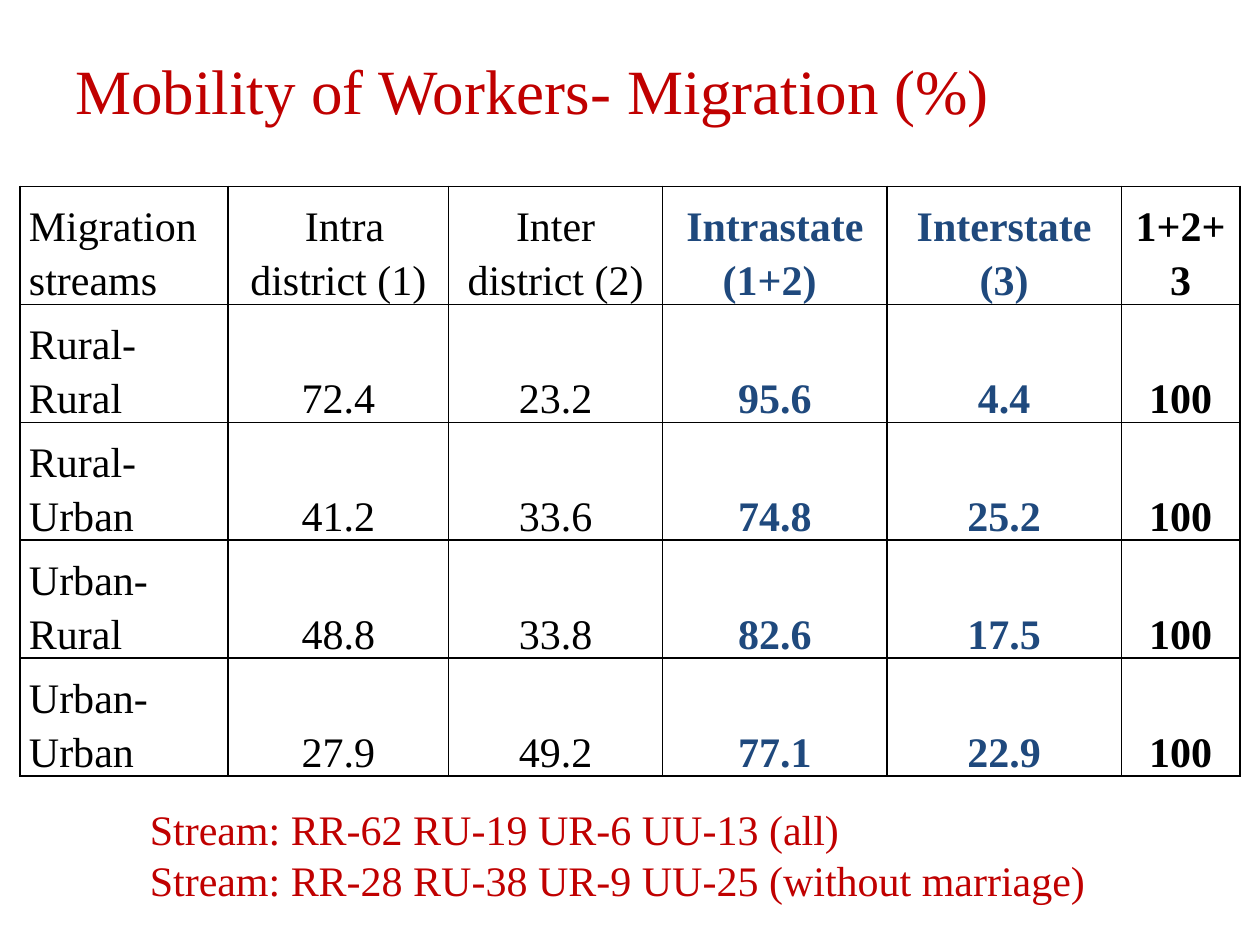
from lxml.etree import SubElement
from pptx import Presentation
from pptx.dml.color import RGBColor
from pptx.enum.text import MSO_ANCHOR as Anchor, PP_ALIGN as Align
from pptx.oxml.ns import qn
from pptx.util import Inches, Pt

COLORS = {"red": "C00000", "blue": "1F497D", "black": "000000", "white": "FFFFFF"}
FONT = "Times New Roman"

TITLE = ["Mobility of Workers- Migration (%)"]
STREAM_SHARES = [
    "Stream: RR-62 RU-19 UR-6 UU-13 (all)",
    "Stream: RR-28 RU-38 UR-9 UU-25 (without marriage)",
]
MIGRATION = [
    ["Migration\nstreams", "Intra district (1)", "Inter district (2)",
     "Intrastate (1+2) ", "Interstate (3)", "1+2+3"],
    ["Rural-Rural", "72.4", "23.2", "95.6", "4.4", "100"],
    ["Rural-Urban", "41.2", "33.6", "74.8", "25.2", "100"],
    ["Urban-Rural", "48.8", "33.8", "82.6", "17.5", "100"],
    ["Urban-Urban", "27.9", "49.2", "77.1", "22.9", "100"],
]
# width in inches, text format
COLUMNS = [
    (1.65, {}),
    (1.75, {"align": Align.CENTER}),
    (1.70, {"align": Align.CENTER}),
    (1.78, {"align": Align.CENTER, "color": "blue", "bold": True}),
    (1.86, {"align": Align.CENTER, "color": "blue", "bold": True}),
    (0.94, {"align": Align.CENTER, "bold": True}),
]
TABLE_LEFT, TABLE_TOP, TABLE_HEIGHT = 0.16, 1.48, 4.68


def write(frame, lines, size=24, color="black", bold=False,
          align=Align.LEFT, spacing=None):
    for index, line in enumerate(lines):
        para = frame.paragraphs[0] if index == 0 else frame.add_paragraph()
        para.alignment = align
        if spacing:
            para.line_spacing = spacing
        span = para.add_run()
        span.text = line
        span.font.name = FONT
        span.font.size = Pt(size)
        span.font.bold = bold
        span.font.color.rgb = RGBColor.from_string(COLORS[color])


def add_text(page, lines, left, top, width, height, anchor=Anchor.TOP, **style):
    box = page.shapes.add_textbox(*map(Inches, (left, top, width, height)))
    box.text_frame.word_wrap = True
    box.text_frame.vertical_anchor = anchor
    write(box.text_frame, lines, **style)


def add_borders(cell):
    properties = cell._tc.get_or_add_tcPr()
    for side in ("lnL", "lnR", "lnT", "lnB"):
        line = SubElement(properties, qn(f"a:{side}"), w=str(Pt(1)))
        fill = SubElement(line, qn("a:solidFill"))
        SubElement(fill, qn("a:srgbClr"), val=COLORS["black"])


def add_migration_table(page):
    width = sum(column_width for column_width, _ in COLUMNS)
    table = page.shapes.add_table(
        len(MIGRATION), len(COLUMNS), Inches(TABLE_LEFT), Inches(TABLE_TOP),
        Inches(width), Inches(TABLE_HEIGHT)).table
    for column, (column_width, _) in zip(table.columns, COLUMNS):
        column.width = Inches(column_width)
    for row, values in zip(table.rows, MIGRATION):
        for cell, value, (_, style) in zip(row.cells, values, COLUMNS):
            cell.margin_left = cell.margin_right = Inches(0.07)
            cell.margin_top = cell.margin_bottom = 0
            cell.vertical_anchor = Anchor.BOTTOM
            add_borders(cell)
            cell.fill.solid()
            cell.fill.fore_color.rgb = RGBColor.from_string(COLORS["white"])
            write(cell.text_frame, value.split("\n"), spacing=1.15, **style)
    intra_para = table.cell(0, 1).text_frame.paragraphs[0]
    intra_para._p.get_or_add_pPr().set("indent", str(Inches(0.1)))


def main():
    deck = Presentation()
    deck.slide_width, deck.slide_height = Inches(10), Inches(7.5)
    page = deck.slides.add_slide(deck.slide_layouts[6])
    add_text(page, TITLE, 0.5, 0.08, 9.15, 1.25,
             anchor=Anchor.MIDDLE, size=36, color="red")
    add_migration_table(page)
    add_text(page, STREAM_SHARES, 1.09, 6.33, 7.81, 0.91, color="red")
    deck.save("out.pptx")


if __name__ == "__main__":
    main()
